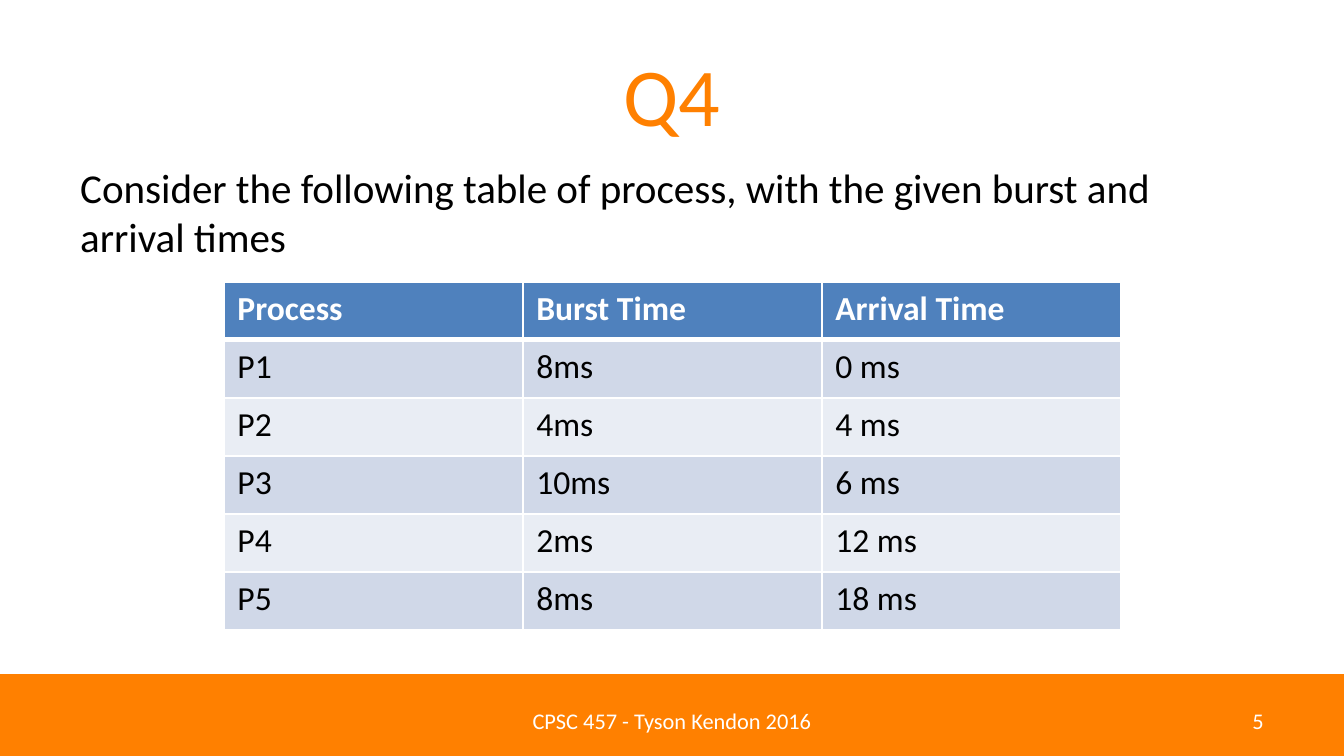
import pptx
import pptx.util
import pptx.dml.color
import pptx.enum.shapes
import pptx.enum.text
import pptx.oxml
import pptx.oxml.ns

RGBColor = pptx.dml.color.RGBColor
ALIGN = pptx.enum.text.PP_ALIGN
ANCHOR = pptx.enum.text.MSO_ANCHOR

PX = 914400 / 134.4  # EMU per px
ORANGE = RGBColor(0xFF, 0x80, 0x00)
WHITE = RGBColor(0xFF, 0xFF, 0xFF)
BLACK = RGBColor(0x00, 0x00, 0x00)
BLUE = RGBColor(0x4F, 0x81, 0xBD)
BAND_DARK = RGBColor(0xD0, 0xD8, 0xE8)
BAND_LIGHT = RGBColor(0xE9, 0xED, 0xF4)


def emu(*lengths):
    return [pptx.util.Emu(round(n * PX)) for n in lengths]


def write(tf, text, size, color, bold=False, align=ALIGN.LEFT):
    p = tf.paragraphs[0]
    p.alignment = align
    r = p.add_run()
    r.text = text
    font = {"name": "Calibri", "size": pptx.util.Pt(size), "bold": bold}
    for key, value in font.items():
        setattr(r.font, key, value)
    r.font.color.rgb = color


prs = pptx.Presentation()
prs.slide_width, prs.slide_height = emu(1344, 756)
s = prs.slides.add_slide(prs.slide_layouts[6])

# Footer bar
bar = s.shapes.add_shape(pptx.enum.shapes.MSO_SHAPE.RECTANGLE, *emu(0, 675, 1344, 81))
bar.shadow.inherit = False
bar.fill.solid()
bar.fill.fore_color.rgb = ORANGE
bar.line.color.rgb = ORANGE
bar.line.width = pptx.util.Pt(0.75)

# Title, question and footer texts
question = "Consider the following table of process, with the given burst and arrival times"
texts = [
    ("Q4", (67, 31, 1210, 126), 44, ORANGE, ALIGN.CENTER, ANCHOR.MIDDLE),
    (question, (67, 156, 1210, 113), 22, BLACK, ALIGN.LEFT, ANCHOR.TOP),
    ("CPSC 457 - Tyson Kendon 2016", (459, 701, 426, 40), 12, WHITE, ALIGN.CENTER, ANCHOR.MIDDLE),
    ("5", (963, 701, 314, 40), 12, WHITE, ALIGN.RIGHT, ANCHOR.MIDDLE),
]
for text, box, size, color, align, anchor in texts:
    tf = s.shapes.add_textbox(*emu(*box)).text_frame
    for key, value in {"word_wrap": True, "vertical_anchor": anchor}.items():
        setattr(tf, key, value)
    write(tf, text, size, color, align=align)

# Process table
rows = [
    ("Process", "Burst Time", "Arrival Time"),
    ("P1", "8ms", "0 ms"),
    ("P2", "4ms", "4 ms"),
    ("P3", "10ms", "6 ms"),
    ("P4", "2ms", "12 ms"),
    ("P5", "8ms", "18 ms"),
]
COL_W, ROW_H = 299, 58
table = s.shapes.add_table(
    len(rows), 3, *emu(224, 282, 3 * COL_W, len(rows) * ROW_H)).table
for col in table.columns:
    col.width = emu(COL_W)[0]
for row in table.rows:
    row.height = emu(ROW_H)[0]

for i, values in enumerate(rows):
    header = i == 0
    fill = BLUE if header else BAND_DARK if i % 2 else BAND_LIGHT
    # White cell borders, thicker under the header
    widths = {"L": 1, "R": 1, "T": 3 if i == 1 else 1, "B": 3 if header else 1}
    for j, value in enumerate(values):
        cell = table.cell(i, j)
        write(cell.text_frame, value, 18, WHITE if header else BLACK, bold=header)
        tcPr = cell._tc.get_or_add_tcPr()
        for side, width in widths.items():
            tcPr.append(pptx.oxml.parse_xml(
                f'<a:ln{side} {pptx.oxml.ns.nsdecls("a")} w="{pptx.util.Pt(width)}">'
                f'<a:solidFill><a:srgbClr val="{WHITE}"/></a:solidFill></a:ln{side}>'))
        cell.fill.solid()
        cell.fill.fore_color.rgb = fill

prs.save("out.pptx")
